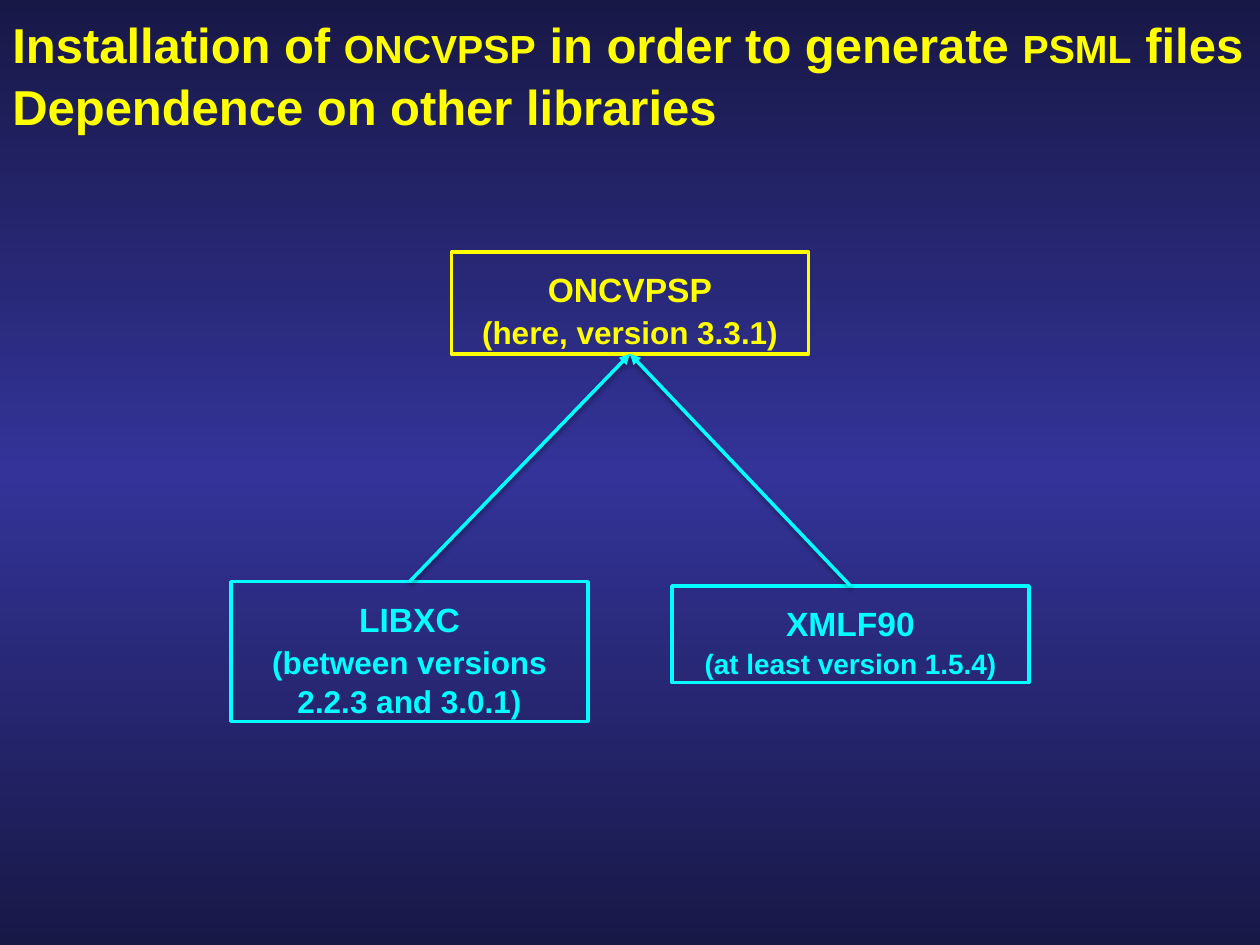
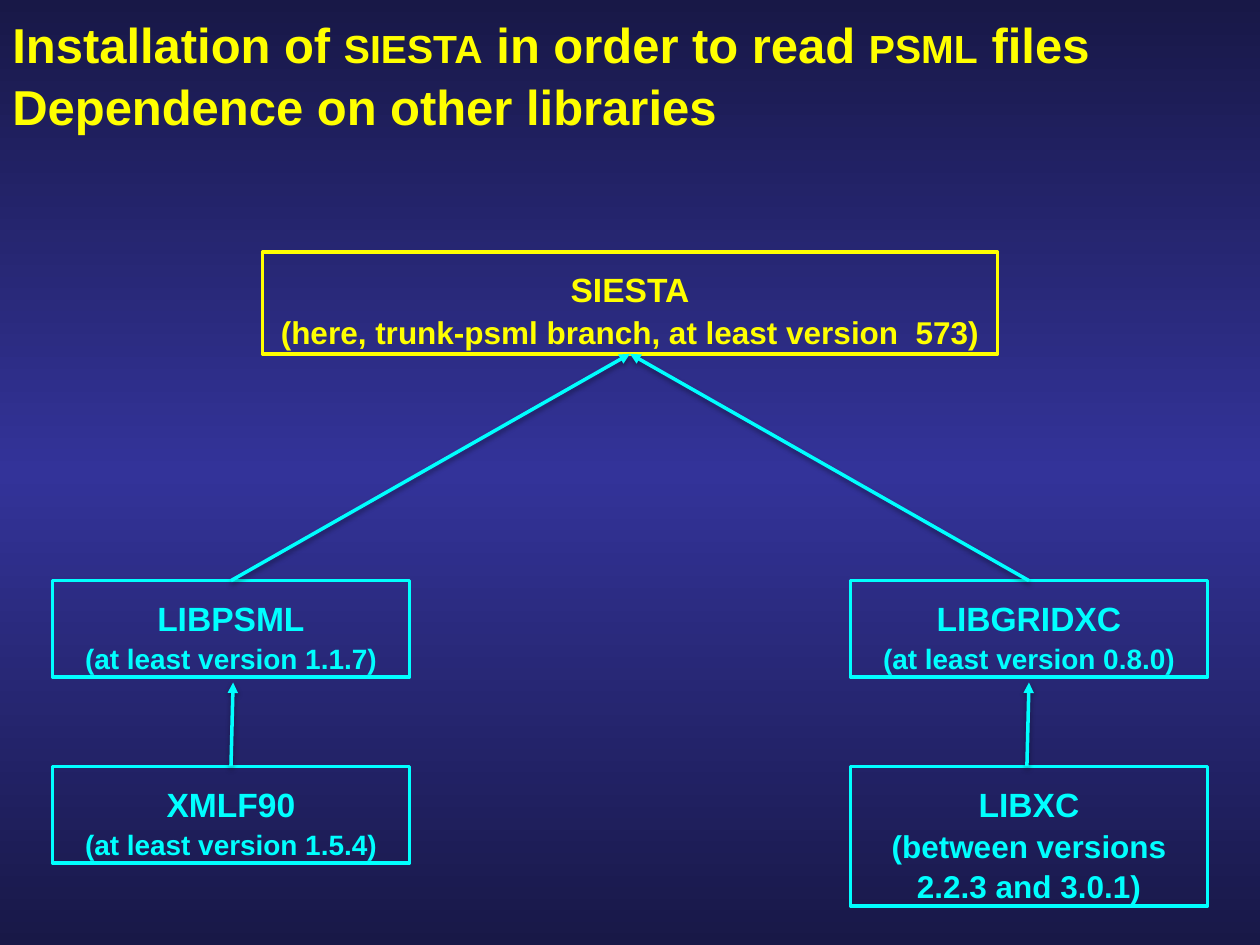
from dataclasses import dataclass
from typing import NamedTuple

from lxml.etree import SubElement
from pptx import Presentation
from pptx.dml.color import RGBColor
from pptx.enum.shapes import MSO_CONNECTOR as CONN, MSO_SHAPE as SHAPE
from pptx.enum.text import MSO_ANCHOR as ANCHOR, MSO_AUTO_SIZE as AUTO, PP_ALIGN as ALIGN
from pptx.oxml import parse_xml
from pptx.oxml.ns import nsdecls, qn
from pptx.util import Emu, Pt

EMU_PER_PX = 7620
SLIDE_W, SLIDE_H = 1200, 900
TITLE_H = 140
NODE_W = 340
TOP, BOTTOM = 0, 2


@dataclass(frozen=True)
class Theme:
    font: str = "Arial"
    root: str = "FFFF00"
    library: str = "00FFFF"
    edge: str = "181847"
    middle: str = "333399"
    title: int = 28
    name: int = 24
    detail: int = 18
    small_detail: int = 16
    line: int = 2
    spacing: float = 1.05


THEME = Theme()


class Run(NamedTuple):
    text: str
    size: int
    caps: bool = False


class Node(NamedTuple):
    name: str
    detail: str
    x: int
    y: int
    h: int
    w: int = NODE_W
    size: int = THEME.detail
    color: str = THEME.library


class Link(NamedTuple):
    source: str
    target: str
    start_dx: int = 0
    end_dx: int = 0
    gap: int = 0


class Page(NamedTuple):
    program: str
    purpose: str
    nodes: list[Node]
    links: list[Link]


def px(n: int) -> Emu:
    return Emu(n * EMU_PER_PX)


def root(name: str, detail: str, w: int) -> Node:
    return Node(name, detail, (SLIDE_W - w) // 2, 240, 97, w, color=THEME.root)


def library(name: str, version: str, x: int, y: int) -> Node:
    return Node(name, f"(at least version {version})", x, y, 92, size=THEME.small_detail)


def libxc(x: int, y: int) -> Node:
    return Node("libxc", "(between versions 2.2.3 and 3.0.1)", x, y, 133)


def paint_background(prs) -> None:
    fill = prs.slide_master.background.fill
    fill.gradient()
    fill.gradient_angle = 270
    stops = fill.gradient_stops
    for stop, pos, color in zip(stops, (0, 1), (THEME.edge, THEME.edge)):
        stop.position = pos
        stop.color.rgb = RGBColor.from_string(color)
    middle = parse_xml(
        f'<a:gs {nsdecls("a")} pos="50000"><a:srgbClr val="{THEME.middle}"/></a:gs>')
    gs_list = prs.slide_master.element.find(".//" + qn("p:bgPr")).find(".//" + qn("a:gsLst"))
    gs_list.insert(1, middle)


def add_runs(p, runs: list[Run], color: str) -> None:
    p.line_spacing = THEME.spacing
    for run in runs:
        r = p.add_run()
        r.text = run.text
        r.font.name = THEME.font
        r.font.size = Pt(run.size)
        r.font.bold = True
        r.font.color.rgb = RGBColor.from_string(color)
        if run.caps:
            r.font._element.set("cap", "small")


def add_title(s, program: str, purpose: str) -> None:
    tf = s.shapes.add_textbox(0, 0, px(SLIDE_W), px(TITLE_H)).text_frame
    tf.word_wrap = True
    tf.vertical_anchor = ANCHOR.MIDDLE
    size = THEME.title
    add_runs(tf.paragraphs[0], [
        Run("Installation of ", size),
        Run(program, size, True),
        Run(f" in order to {purpose} ", size),
        Run("psml", size, True),
        Run(" files Dependence on other libraries", size),
    ], THEME.root)


def add_node(s, node: Node):
    sp = s.shapes.add_shape(SHAPE.RECTANGLE, px(node.x), px(node.y), px(node.w), px(node.h))
    sp.shadow.inherit = False
    sp.fill.background()
    sp.line.color.rgb = RGBColor.from_string(node.color)
    sp.line.width = Pt(THEME.line)
    tf = sp.text_frame
    tf.word_wrap = True
    tf.auto_size = AUTO.SHAPE_TO_FIT_TEXT
    tf.vertical_anchor = ANCHOR.TOP
    lines = [Run(node.name, THEME.name, True), Run(node.detail, node.size)]
    for i, line in enumerate(lines):
        p = tf.add_paragraph() if i else tf.paragraphs[0]
        p.alignment = ALIGN.CENTER
        add_runs(p, [line], node.color)
    return sp


def add_link(s, link: Link, nodes: dict, shapes: dict) -> None:
    a, b = nodes[link.source], nodes[link.target]
    c = s.shapes.add_connector(
        CONN.STRAIGHT,
        px(a.x + a.w // 2 + link.start_dx), px(a.y),
        px(b.x + b.w // 2 + link.end_dx), px(b.y + b.h + link.gap))
    if not link.gap:
        c.begin_connect(shapes[link.source], TOP)
        c.end_connect(shapes[link.target], BOTTOM)
    c.line.color.rgb = RGBColor.from_string(THEME.library)
    c.line.width = Pt(THEME.line)
    SubElement(c.line._get_or_add_ln(), qn("a:tailEnd"), type="triangle")
    c._element.spPr.append(parse_xml(
        f'<a:effectLst {nsdecls("a")}><a:outerShdw blurRad="{Pt(3.1)}" dist="{Pt(1.6)}" '
        'dir="5400000" rotWithShape="0"><a:srgbClr val="000000"><a:alpha val="38000"/>'
        '</a:srgbClr></a:outerShdw></a:effectLst>'))


def add_page(prs, page: Page) -> None:
    s = prs.slides.add_slide(prs.slide_layouts[6])
    add_title(s, page.program, page.purpose)
    nodes = {node.name: node for node in page.nodes}
    shapes = {name: add_node(s, node) for name, node in nodes.items()}
    for link in page.links:
        add_link(s, link, nodes, shapes)


PAGES = [
    Page("oncvpsp", "generate", [
        libxc(220, 554),
        library("xmlf90", "1.5.4", 640, 558),
        root("oncvpsp", "(here, version 3.3.1)", NODE_W),
    ], [
        Link("libxc", "oncvpsp"),
        Link("xmlf90", "oncvpsp"),
    ]),
    Page("siesta", "read", [
        libxc(810, 730),
        library("xmlf90", "1.5.4", 50, 730),
        root("siesta", "(here, trunk-psml branch, at least version  573)", 700),
        library("libpsml", "1.1.7", 50, 553),
        library("libgridxc", "0.8.0", 810, 553),
    ], [
        Link("libpsml", "siesta"),
        Link("libgridxc", "siesta"),
        Link("xmlf90", "libpsml", end_dx=2, gap=5),
        Link("libxc", "libgridxc", start_dx=-2, gap=5),
    ]),
]


def main() -> None:
    prs = Presentation()
    prs.slide_width, prs.slide_height = px(SLIDE_W), px(SLIDE_H)
    paint_background(prs)
    for page in PAGES:
        add_page(prs, page)
    prs.save("out.pptx")


if __name__ == "__main__":
    main()
